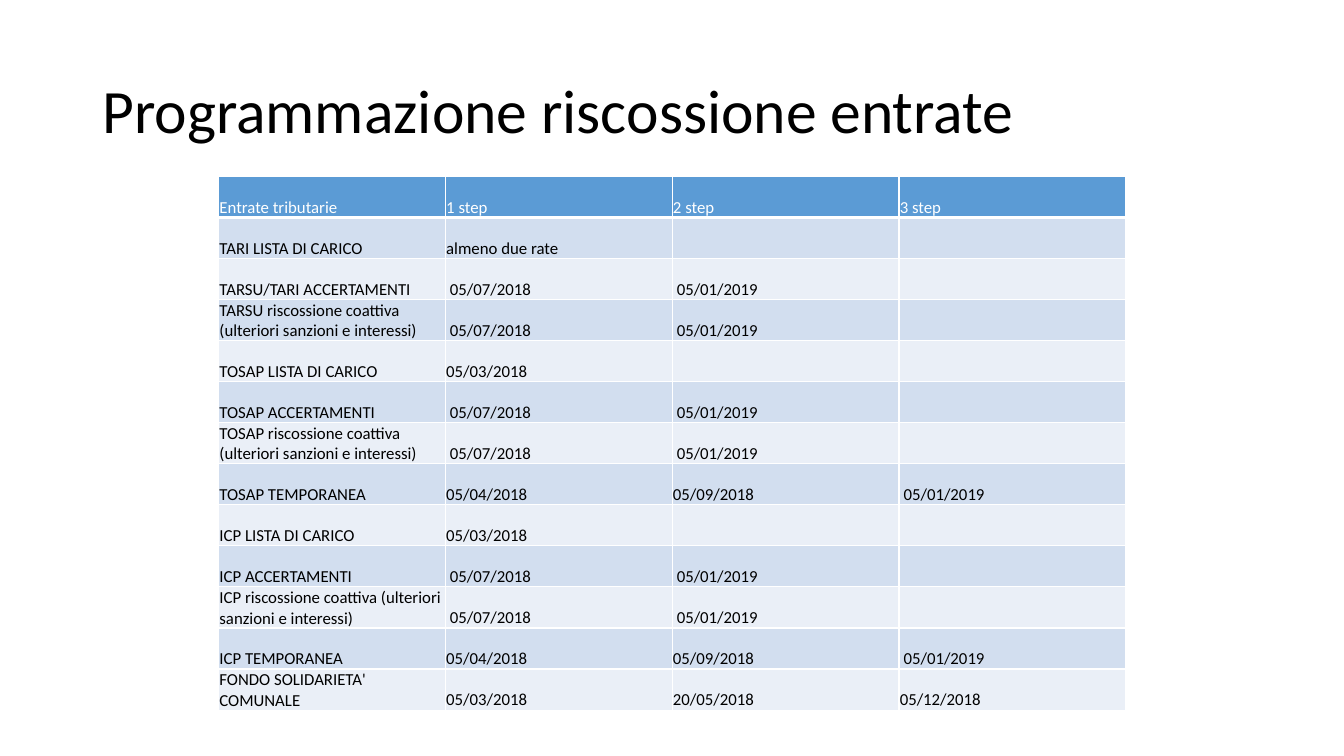
from dataclasses import dataclass

from lxml.etree import SubElement
from pptx import Presentation
from pptx.dml.color import RGBColor
from pptx.enum.text import MSO_VERTICAL_ANCHOR as Anchor
from pptx.oxml.ns import qn
from pptx.util import Cm, Pt

WHITE = RGBColor(0xFF, 0xFF, 0xFF)
BLACK = RGBColor(0x00, 0x00, 0x00)
HEADER_BLUE = RGBColor(0x5B, 0x9B, 0xD5)
BAND_DARK = RGBColor(0xD2, 0xDE, 0xEF)
BAND_LIGHT = RGBColor(0xEA, 0xEF, 0xF7)

FONT = "Calibri"
COLUMNS = 4
TABLE_WIDTH, TABLE_HEIGHT = Cm(22.86), Cm(13.44)
CELL_FORMAT = {
    "margin_left": Cm(0.02),
    "margin_right": Cm(0.02),
    "margin_top": Cm(0.02),
    "margin_bottom": Cm(0),
    "vertical_anchor": Anchor.BOTTOM,
}


@dataclass
class Revenue:
    name: str
    steps: tuple[str, ...]


# Collection dates shared by several revenues
ASSESSED = (" 05/07/2018", " 05/01/2019")
TEMPORARY = ("05/04/2018", "05/09/2018", " 05/01/2019")
LISTED = ("05/03/2018",)
ENFORCED = "riscossione coattiva (ulteriori sanzioni e interessi)"

REVENUES = [
    Revenue("Entrate tributarie", ("1 step", "2 step", "3 step")),
    Revenue("TARI LISTA DI CARICO", ("almeno due rate",)),
    Revenue("TARSU/TARI ACCERTAMENTI", ASSESSED),
    Revenue(f"TARSU {ENFORCED}", ASSESSED),
    Revenue("TOSAP LISTA DI CARICO", LISTED),
    Revenue("TOSAP ACCERTAMENTI", ASSESSED),
    Revenue(f"TOSAP {ENFORCED}", ASSESSED),
    Revenue("TOSAP TEMPORANEA", TEMPORARY),
    Revenue("ICP LISTA DI CARICO", LISTED),
    Revenue("ICP ACCERTAMENTI", ASSESSED),
    Revenue(f"ICP {ENFORCED}", ASSESSED),
    Revenue("ICP TEMPORANEA", TEMPORARY),
    Revenue("FONDO SOLIDARIETA' COMUNALE", ("05/03/2018", "20/05/2018", "05/12/2018")),
]


def write(para, text: str, size: int, color: RGBColor) -> None:
    span = para.add_run()
    span.text = text
    for name, value in {"name": FONT, "size": Pt(size)}.items():
        setattr(span.font, name, value)
    span.font.color.rgb = color


def add_border(cell, side: str, width: int) -> None:
    properties = cell._tc.get_or_add_tcPr()
    line = SubElement(properties, qn(f"a:{side}"), w=str(Pt(width)))
    fill = SubElement(line, qn("a:solidFill"))
    SubElement(fill, qn("a:srgbClr"), val=str(WHITE))


def draw_title(page, text: str) -> None:
    box = page.shapes.add_textbox(Cm(2.33), Cm(1.01), Cm(29.21), Cm(3.68))
    frame = box.text_frame
    for name, value in {"word_wrap": True, "vertical_anchor": Anchor.MIDDLE}.items():
        setattr(frame, name, value)
    para = frame.paragraphs[0]
    para.line_spacing = 0.9
    write(para, text, 44, BLACK)


def draw_cell(cell, text: str, row: int) -> None:
    header = row == 0
    for name, value in CELL_FORMAT.items():
        setattr(cell, name, value)
    # Borders come before the fill in the cell properties
    for side in ("lnL", "lnR", "lnT", "lnB"):
        thick = (header and side == "lnB") or (row == 1 and side == "lnT")
        add_border(cell, side, 3 if thick else 1)
    cell.fill.solid()
    band = BAND_DARK if row % 2 else BAND_LIGHT
    cell.fill.fore_color.rgb = HEADER_BLUE if header else band
    if text:
        write(cell.text_frame.paragraphs[0], text, 12, WHITE if header else BLACK)


def draw_schedule(page, revenues: list[Revenue]) -> None:
    table = page.shapes.add_table(
        len(revenues), COLUMNS, Cm(5.51), Cm(4.45), TABLE_WIDTH, TABLE_HEIGHT
    ).table
    for row, revenue in enumerate(revenues):
        texts = (revenue.name, *revenue.steps)
        for column in range(COLUMNS):
            text = texts[column] if column < len(texts) else ""
            draw_cell(table.cell(row, column), text, row)


def main() -> None:
    deck = Presentation()
    deck.slide_width, deck.slide_height = Cm(33.87), Cm(19.05)
    page = deck.slides.add_slide(deck.slide_layouts[6])
    draw_title(page, "Programmazione riscossione entrate")
    draw_schedule(page, REVENUES)
    deck.save("out.pptx")


if __name__ == "__main__":
    main()
